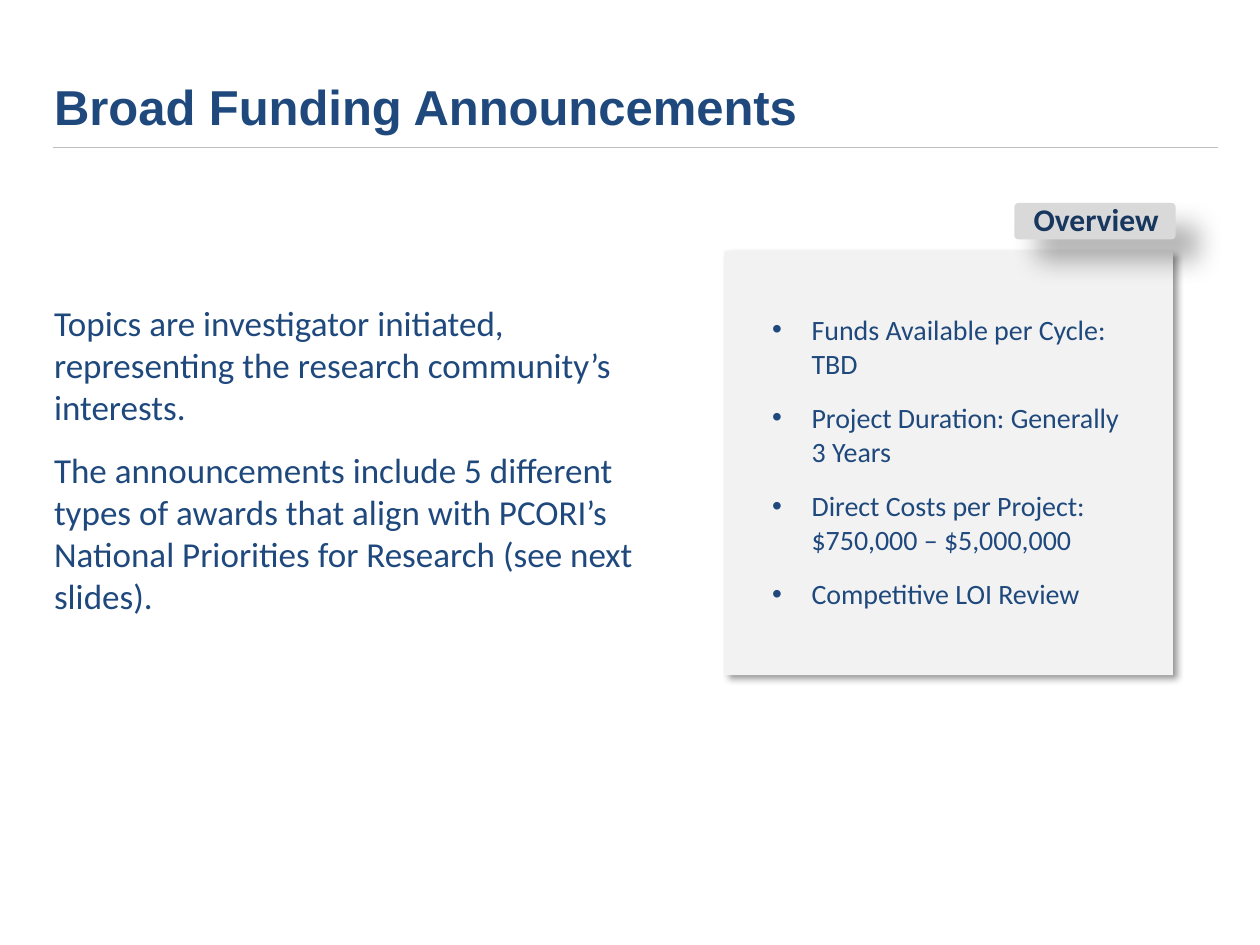
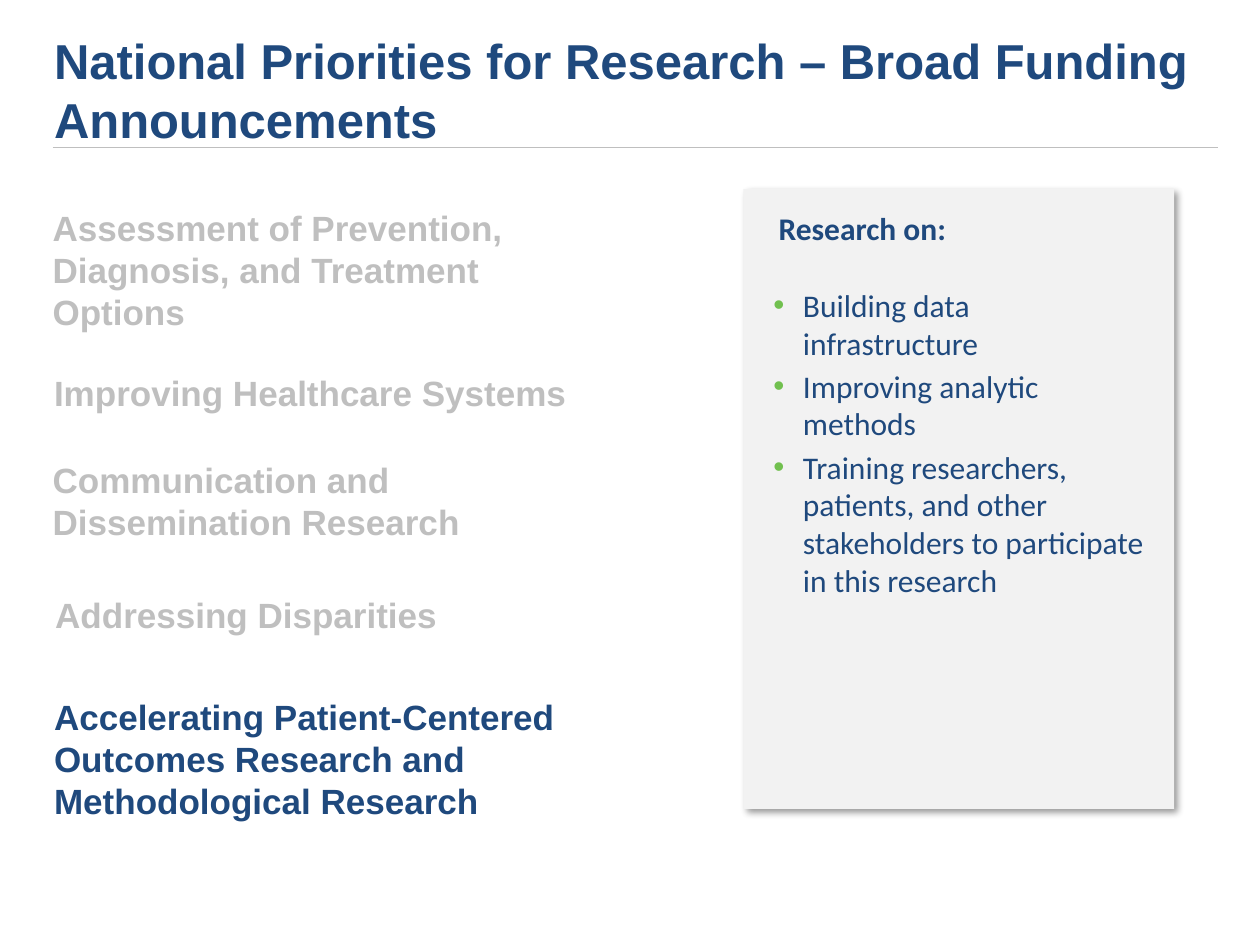
from lxml.etree import SubElement
from pptx import Presentation
from pptx.dml.color import RGBColor
from pptx.enum.shapes import MSO_CONNECTOR, MSO_SHAPE
from pptx.enum.text import MSO_ANCHOR, PP_ALIGN
from pptx.oxml.ns import qn
from pptx.util import Pt

COLORS = {
    "blue": "1F497D",
    "navy": "17375E",
    "green": "71C04F",
    "panel": "F2F2F2",
    "tab": "D9D9D9",
    "gray": "BFBFBF",
    "shadow": "000000",
}


class Deck:
    heading_font = "Arial"
    body_font = "Calibri"
    text_left = 23.8

    def __init__(self):
        self.presentation = Presentation()
        self.presentation.slide_width = Pt(720)
        self.presentation.slide_height = Pt(540)
        self.slide = None

    def color(self, name):
        return RGBColor.from_string(COLORS[name])

    def add_slide(self, title, title_top):
        self.slide = self.presentation.slides.add_slide(self.presentation.slide_layouts[6])
        self.text([title], self.text_left, title_top, 666, 54, 28, font=self.heading_font, bold=True)
        self.rule(30.2, 696.2, 84.2)

    def rule(self, left, right, y):
        connector = self.slide.shapes.add_connector(
            MSO_CONNECTOR.STRAIGHT, Pt(left), Pt(y), Pt(right), Pt(y))
        connector.line.color.rgb = self.color("gray")
        connector.line.width = Pt(0.25)
        SubElement(connector._element.spPr, qn("a:effectLst"))

    def block(self, preset, left, top, width, height, fill, opacity, blur, distance):
        shape = self.slide.shapes.add_shape(preset, Pt(left), Pt(top), Pt(width), Pt(height))
        shape.fill.solid()
        shape.fill.fore_color.rgb = self.color(fill)
        shape.line.fill.background()
        shape.shadow.inherit = False
        effects = shape._element.spPr.find(qn("a:effectLst"))
        shadow = SubElement(
            effects, qn("a:outerShdw"), blurRad=str(Pt(blur)), dist=str(Pt(distance)),
            dir=str(45 * 60000), algn="tl", rotWithShape="0")
        shadow_color = SubElement(shadow, qn("a:srgbClr"), val=COLORS["shadow"])
        SubElement(shadow_color, qn("a:alpha"), val=str(opacity * 1000))
        return shape

    def panel(self, left, top, width, height):
        self.block(MSO_SHAPE.RECTANGLE, left, top, width, height, "panel", 40, 4, 3)

    def tab(self, label, left, top, width, height):
        shape = self.block(
            MSO_SHAPE.ROUNDED_RECTANGLE, left, top, width, height, "tab", 30, 15, 18)
        shape.adjustments[0] = 0.12
        frame = shape.text_frame
        frame.vertical_anchor = MSO_ANCHOR.MIDDLE
        frame.margin_left = frame.margin_top = frame.margin_bottom = 0
        frame.margin_right = Pt(9)
        paragraph = frame.paragraphs[0]
        paragraph.text = label
        paragraph.alignment = PP_ALIGN.RIGHT
        paragraph.line_spacing = 0.9
        self.style(paragraph, 18, "navy", self.body_font, True)

    def text(self, lines, left, top, width, height, size, color="blue", font=body_font,
             bold=False, space_after=0, indent=0, bullet_color=None):
        box = self.slide.shapes.add_textbox(Pt(left), Pt(top), Pt(width), Pt(height))
        frame = box.text_frame
        frame.word_wrap = True
        for index, line in enumerate(lines):
            paragraph = frame.add_paragraph() if index else frame.paragraphs[0]
            paragraph.text = line
            if indent:
                self.bullet(paragraph, indent, bullet_color)
            paragraph.space_after = Pt(space_after)
            self.style(paragraph, size, color, font, bold)

    def bullet(self, paragraph, indent, color):
        properties = paragraph._p.get_or_add_pPr()
        properties.set("marL", str(Pt(indent)))
        properties.set("indent", str(-Pt(indent)))
        if color:
            bullet_color = SubElement(properties, qn("a:buClr"))
            SubElement(bullet_color, qn("a:srgbClr"), val=COLORS[color])
        SubElement(properties, qn("a:buFont"), typeface=self.heading_font)
        SubElement(properties, qn("a:buChar"), char="•")

    def style(self, paragraph, size, color, font, bold):
        paragraph.font.size = Pt(size)
        paragraph.font.name = font
        paragraph.font.bold = bold
        paragraph.font.color.rgb = self.color(color)


def add_announcements(deck):
    deck.add_slide("Broad Funding Announcements", 40.3)
    deck.panel(414, 143.3, 256.3, 242.6)
    deck.tab("Overview", 579.6, 115.9, 92.2, 20.9)
    deck.text([
        "Funds Available per Cycle: TBD",
        "Project Duration: Generally 3 Years",
        "Direct Costs per Project: $750,000 – $5,000,000",
        "Competitive LOI Review",
    ], 434.2, 175, 216, 179.3, 16, space_after=12, indent=22.5)
    deck.text([
        "Topics are investigator initiated, representing the research community’s interests.",
        "The announcements include 5 different types of awards that align with PCORI’s "
        "National Priorities for Research (see next slides).",
    ], deck.text_left, 168.5, 362.2, 189.4, 20, space_after=12)


def add_priorities(deck):
    deck.add_slide("National Priorities for Research – Broad Funding Announcements", 13.7)
    deck.panel(424.8, 108, 246.2, 354.2)
    priorities = [
        ("Assessment of Prevention, Diagnosis, and Treatment Options", 23, 114.5, 80, "gray"),
        ("Improving Healthcare Systems", 23.8, 208.8, 32, "gray"),
        ("Communication and Dissemination Research", 23, 258.5, 56, "gray"),
        ("Addressing Disparities", 24.5, 335.5, 32, "gray"),
        ("Accelerating Patient-Centered Outcomes Research and Methodological Research",
         23.8, 393.8, 80, "blue"),
    ]
    for priority, left, top, height, color in priorities:
        deck.text([priority], left, top, 328.3, height, 20, color, deck.heading_font, True, 12)
    deck.text(["Research on:"], 437.8, 115.9, 138.2, 28.8, 18, bold=True, space_after=6)
    deck.text([
        "Building data infrastructure",
        "Improving analytic methods",
        "Training researchers, patients, and other stakeholders to participate in this research",
    ], 434.9, 159.8, 228.2, 187.9, 18, space_after=3, indent=16.9, bullet_color="green")


def main():
    deck = Deck()
    add_announcements(deck)
    add_priorities(deck)
    deck.presentation.save("out.pptx")


if __name__ == "__main__":
    main()
